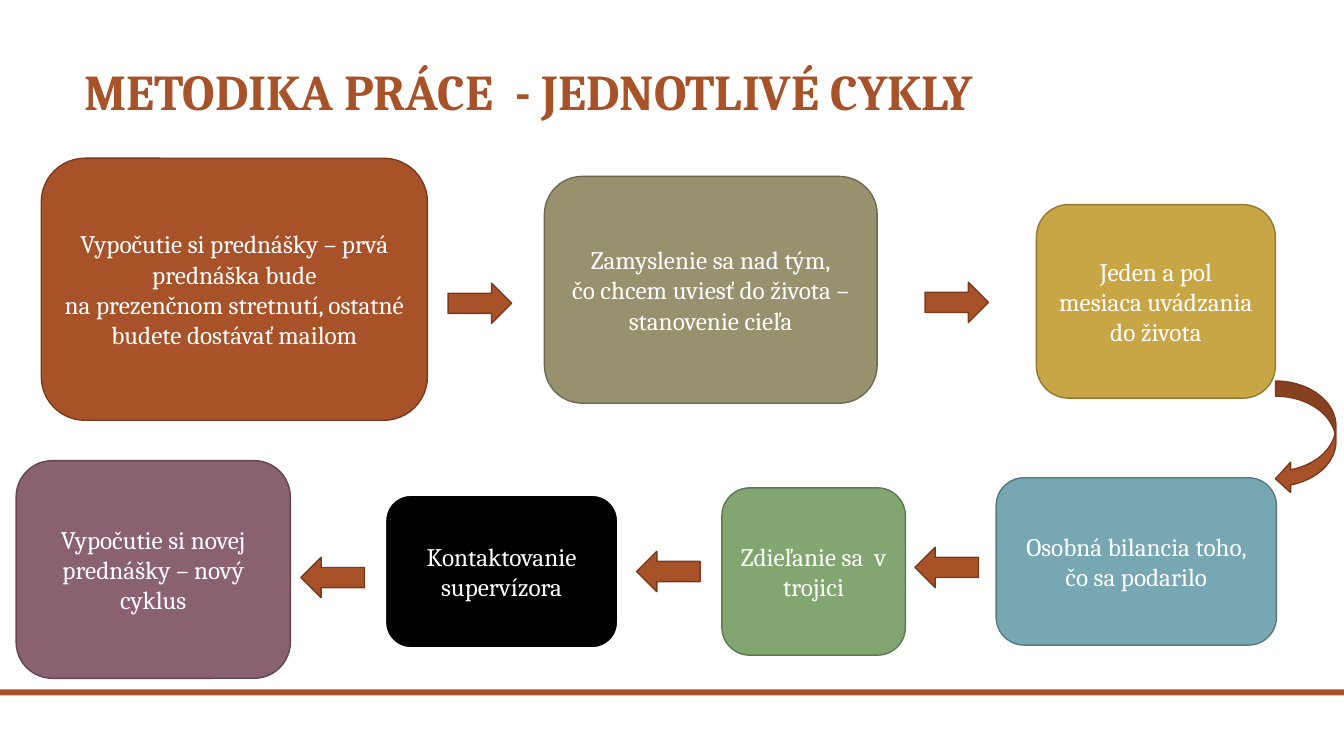
from pptx import Presentation
from pptx.dml.color import RGBColor
from pptx.enum.shapes import MSO_SHAPE as SHAPE
from pptx.enum.text import MSO_ANCHOR as ANCHOR, PP_ALIGN as ALIGN
from pptx.util import Inches, Pt

COLORS = {
    "rust": "A85229", "rust_edge": "7A3B1D",
    "olive": "98916E", "olive_edge": "6E6950",
    "gold": "C9A645", "gold_edge": "927932",
    "teal": "76A7B2", "teal_edge": "567981",
    "green": "82A670", "green_edge": "5E7951",
    "plum": "896170", "plum_edge": "634651",
    "black": "000000", "black_edge": "FFFFFF",
    "white": "FFFFFF",
}
FONT = "Cambria"
TITLE = "METODIKA PRÁCE  - JEDNOTLIVÉ CYKLY"
STEPS = [
    (["Vypočutie si prednášky – prvá prednáška bude",
      "na prezenčnom stretnutí, ostatné budete dostávať mailom"],
     "rust", (0.41, 1.57, 3.83, 2.6)),
    (["Zamyslenie sa nad tým,", "čo chcem uviesť do života – stanovenie cieľa"],
     "olive", (5.4, 1.75, 3.3, 2.25)),
    (["Jeden a pol mesiaca uvádzania", "do života"],
     "gold", (10.28, 2.03, 2.37, 1.92)),
    (["Osobná bilancia toho, čo sa podarilo"],
     "teal", (9.88, 4.74, 2.78, 1.66)),
    (["Zdieľanie sa  v trojici"], "green", (7.16, 4.84, 1.82, 1.66)),
    (["Kontaktovanie supervízora"], "black", (3.82, 4.91, 2.31, 1.52)),
    (["Vypočutie si novej prednášky – nový cyklus"],
     "plum", (0.16, 4.57, 2.72, 2.16)),
]
ARROW_SIZE = (0.63, 0.4)
ARROW_CENTERS = [
    (SHAPE.RIGHT_ARROW, 4.76, 3.01),
    (SHAPE.RIGHT_ARROW, 9.49, 3.0),
    (SHAPE.LEFT_ARROW, 9.39, 5.63),
    (SHAPE.LEFT_ARROW, 6.63, 5.67),
    (SHAPE.LEFT_ARROW, 3.3, 5.73),
]

prs = Presentation()
prs.slide_width, prs.slide_height = Inches(13.33), Inches(7.5)
s = prs.slides.add_slide(prs.slide_layouts[6])


def rgb(name):
    return RGBColor.from_string(COLORS[name])


def add_text(sp, lines, size=18, color="white", bold=False,
             align=ALIGN.CENTER, anchor=ANCHOR.MIDDLE, spacing=1.0):
    tf = sp.text_frame
    tf.word_wrap = True
    tf.vertical_anchor = anchor
    for i, line in enumerate(lines):
        p = tf.paragraphs[0] if i == 0 else tf.add_paragraph()
        p.alignment = align
        p.line_spacing = spacing
        r = p.add_run()
        r.text = line
        r.font.name, r.font.size, r.font.bold = FONT, Pt(size), bold
        r.font.color.rgb = rgb(color)


def add_block(kind, box, color, edge=None, width=1):
    sp = s.shapes.add_shape(kind, *map(Inches, box))
    sp.shadow.inherit = False
    sp.fill.solid()
    sp.fill.fore_color.rgb = rgb(color)
    if edge:
        sp.line.color.rgb = rgb(edge)
        sp.line.width = Pt(width)
    else:
        sp.line.fill.background()
    return sp


add_block(SHAPE.RECTANGLE, (0, 6.84, 13.33, 0.06), "rust")
title = s.shapes.add_textbox(*map(Inches, (0.74, 0, 11.84, 1.25)))
add_text(title, [TITLE], size=35.8, color="rust", bold=True,
         align=ALIGN.LEFT, anchor=ANCHOR.BOTTOM, spacing=0.9)

for lines, color, box in STEPS:
    step = add_block(SHAPE.ROUNDED_RECTANGLE, box, color, color + "_edge",
                     1.5 if color == "black" else 1)
    add_text(step, lines)

arrow_w, arrow_h = ARROW_SIZE
for kind, x, y in ARROW_CENTERS:
    add_block(kind, (x - arrow_w / 2, y - arrow_h / 2, arrow_w, arrow_h),
              "rust", "rust_edge")

turn = add_block(SHAPE.CURVED_DOWN_ARROW, (12.39, 4.04, 1.12, 0.6),
                 "rust", "rust_edge")
turn.rotation = 90

prs.save("out.pptx")
